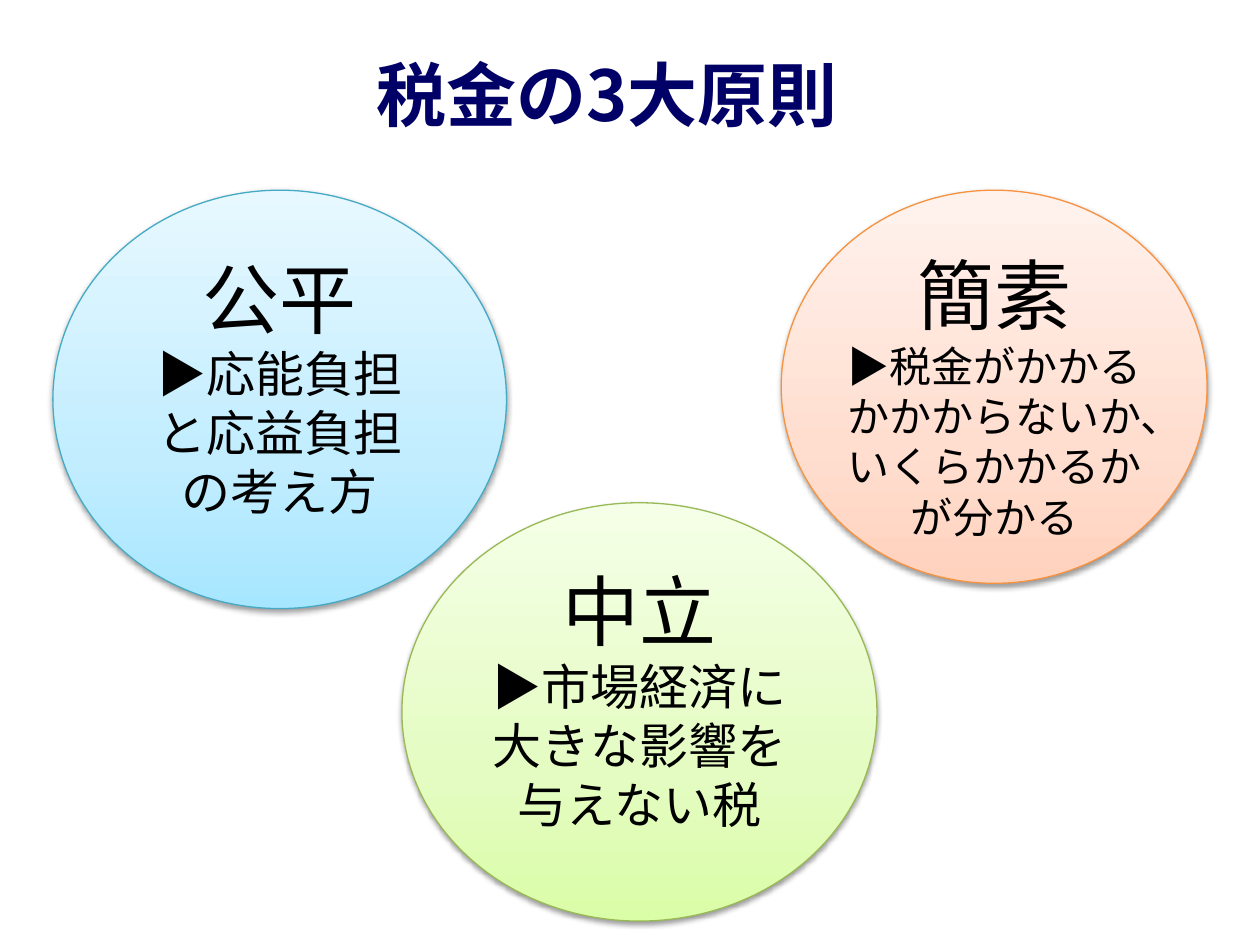
from copy import deepcopy

from lxml.etree import SubElement
from pptx import Presentation
from pptx.dml.color import RGBColor
from pptx.enum.shapes import MSO_SHAPE as Shape
from pptx.enum.text import MSO_ANCHOR as Anchor, MSO_AUTO_SIZE as AutoSize, PP_ALIGN as Align
from pptx.oxml import parse_xml
from pptx.oxml.ns import nsdecls, qn
from pptx.util import Inches, Pt

FONT = "Noto Sans CJK JP"
NAVY = RGBColor(0x00, 0x00, 0x66)
BLACK = RGBColor(0x00, 0x00, 0x00)
WHITE = RGBColor(0xFF, 0xFF, 0xFF)
BLUE_LINE = RGBColor(0x46, 0xAA, 0xC5)
GREEN_LINE = RGBColor(0x98, 0xB9, 0x55)
ORANGE_LINE = RGBColor(0xF6, 0x92, 0x40)
BLUES = (RGBColor(0xA7, 0xE6, 0xFF), RGBColor(0xC1, 0xED, 0xFF), RGBColor(0xE7, 0xF8, 0xFF))
GREENS = (RGBColor(0xDA, 0xFD, 0xA7), RGBColor(0xE4, 0xFC, 0xC2), RGBColor(0xF5, 0xFF, 0xE7))
ORANGES = (RGBColor(0xFF, 0xD2, 0xBD), RGBColor(0xFF, 0xDE, 0xD0), RGBColor(0xFF, 0xF2, 0xED))
STOP_POSITIONS = (0, 0.35, 1)


def add_run(paragraph, text, size, color, bold=False):
    """Add a centred run in the slide font and return it."""
    paragraph.alignment = Align.CENTER
    run = paragraph.add_run()
    run.text = text
    run.font.size = Pt(size)
    run.font.bold = bold
    run.font.color.rgb = color
    run.font.name = FONT
    SubElement(run.font._element, qn("a:ea"), typeface=FONT)
    return run


def outline_run(run, color, width):
    """Draw a thin outline around the letters of a run."""
    run.font._element.insert(0, parse_xml(
        f'<a:ln {nsdecls("a")} w="{Pt(width)}"><a:solidFill>'
        f'<a:srgbClr val="{color}"/></a:solidFill></a:ln>'))


def add_title(slide, text):
    """Add the slide title."""
    box = slide.shapes.add_textbox(Inches(-0.16), Inches(0.36), Inches(9.96), Inches(0.77))
    frame = box.text_frame
    frame.word_wrap = True
    frame.auto_size = AutoSize.SHAPE_TO_FIT_TEXT
    frame.vertical_anchor = Anchor.MIDDLE
    run = add_run(frame.paragraphs[0], text, 40, NAVY, bold=True)
    outline_run(run, WHITE, 0.5)


def fill_gradient(shape, colors):
    """Fill a shape with three colours from bottom to top."""
    shape.fill.gradient()
    shape.fill.gradient_angle = 90
    first_stop = shape.fill._xPr.find(qn("a:gradFill")).find(qn("a:gsLst"))[0]
    first_stop.addnext(deepcopy(first_stop))
    for stop, position, color in zip(shape.fill.gradient_stops, STOP_POSITIONS, colors):
        stop.position = position
        stop.color.rgb = color


def add_shadow(shape):
    """Give a shape a soft shadow below it."""
    shape.shadow.inherit = False
    effects = shape._element.spPr.find(qn("a:effectLst"))
    effects.append(parse_xml(
        f'<a:outerShdw {nsdecls("a")} blurRad="{Pt(3.1)}" dist="{Pt(1.6)}" dir="5400000" '
        'rotWithShape="0"><a:srgbClr val="000000"><a:alpha val="38000"/></a:srgbClr>'
        '</a:outerShdw>'))


def add_principle(slide, bounds, colors, line_color, heading, lines, size):
    """Add one principle as an ellipse with a heading and an explanation."""
    shape = slide.shapes.add_shape(Shape.OVAL, *(Inches(length) for length in bounds))
    fill_gradient(shape, colors)
    shape.line.color.rgb = line_color
    shape.line.width = Pt(0.75)
    add_shadow(shape)
    frame = shape.text_frame
    frame.word_wrap = True
    frame.vertical_anchor = Anchor.TOP
    frame.margin_left = frame.margin_top = frame.margin_right = frame.margin_bottom = 0
    add_run(frame.paragraphs[0], heading, 44, BLACK)
    for line in lines:
        add_run(frame.add_paragraph(), line, size, BLACK)


def main():
    """Build the slide and save it."""
    presentation = Presentation()
    presentation.slide_width = Inches(10)
    presentation.slide_height = Inches(7.5)
    slide = presentation.slides.add_slide(presentation.slide_layouts[6])
    add_title(slide, "　税金の3大原則　")
    add_principle(slide, (0.42, 1.51, 3.6, 3.32), BLUES, BLUE_LINE, "公平",
                  ("▶応能負担", "と応益負担", "の考え方"), 28)
    add_principle(slide, (3.19, 3.99, 3.77, 3.32), GREENS, GREEN_LINE, "中立",
                  ("▶市場経済に大きな影響を与えない税",), 28)
    add_principle(slide, (6.2, 1.51, 3.38, 3.12), ORANGES, ORANGE_LINE, "簡素",
                  ("▶税金がかかるかかからないか、いくらかかるかが分かる",), 24)
    presentation.save("out.pptx")


if __name__ == "__main__":
    main()
